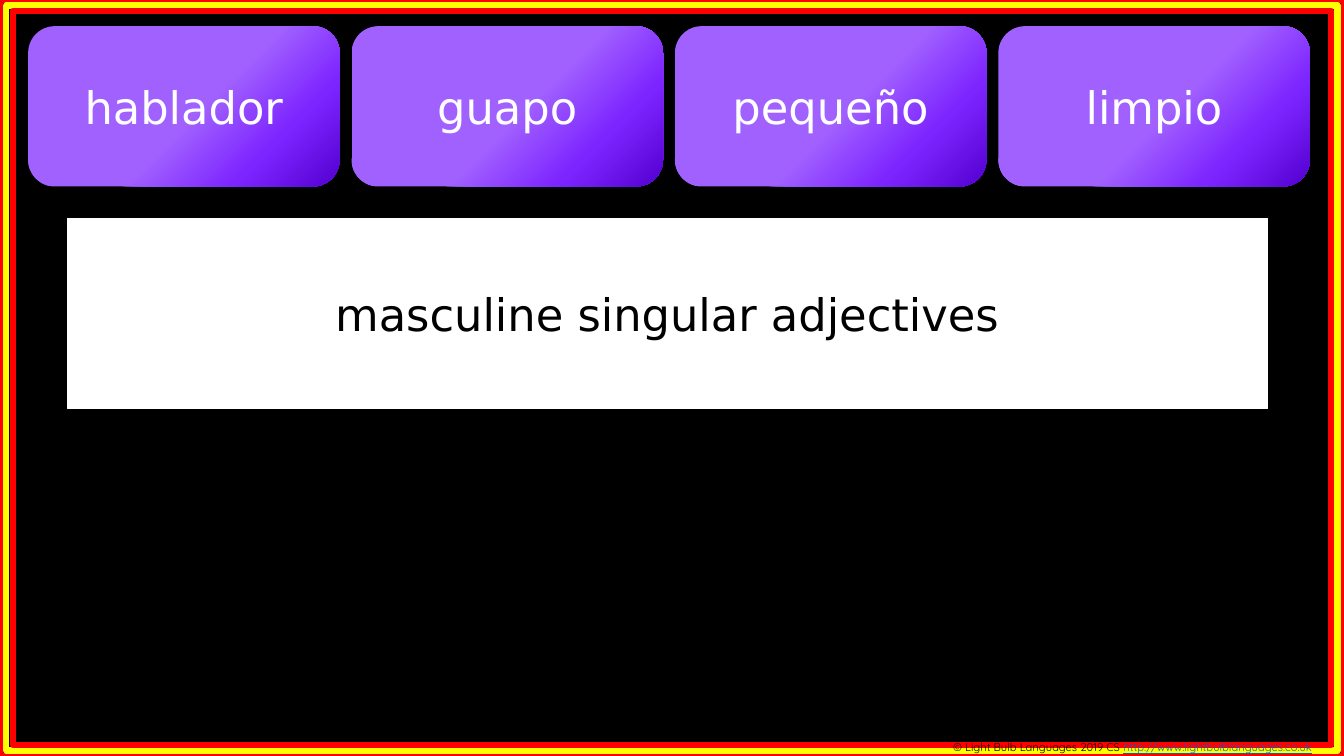
import lxml.etree
import pptx
import pptx.dml.color
import pptx.enum.dml
import pptx.enum.shapes
import pptx.enum.text
import pptx.oxml.ns
import pptx.util

Cm = pptx.util.Cm
Pt = pptx.util.Pt
RGBColor = pptx.dml.color.RGBColor
SHAPE = pptx.enum.shapes.MSO_SHAPE

BLACK = RGBColor(0x00, 0x00, 0x00)
WHITE = RGBColor(0xFF, 0xFF, 0xFF)
RED = RGBColor(0xFF, 0x00, 0x00)
YELLOW = RGBColor(0xFF, 0xFF, 0x00)
LINK_BLUE = RGBColor(0x05, 0x63, 0xC1)
LILAC = RGBColor(0xA1, 0x61, 0xFF)
VIOLET = RGBColor(0x7D, 0x25, 0xFF)
INDIGO = RGBColor(0x54, 0x00, 0xD0)

CARD_STOPS = [(0, LILAC), (28, LILAC), (54, LILAC), (77, VIOLET), (100, INDIGO)]
WORDS = ["hablador", "guapo", "pequeño", "limpio"]
SLIDE_WIDTH, SLIDE_HEIGHT = 33.87, 19.05


def add_box(slide, preset, left, top, width, height):
    shape = slide.shapes.add_shape(preset, Cm(left), Cm(top), Cm(width), Cm(height))
    shape.shadow.inherit = False
    return shape


def write_centred(shape, text, color):
    frame = shape.text_frame
    frame.word_wrap = True
    frame.vertical_anchor = pptx.enum.text.MSO_ANCHOR.MIDDLE
    paragraph = frame.paragraphs[0]
    paragraph.text = text
    paragraph.alignment = pptx.enum.text.PP_ALIGN.CENTER
    paragraph.font.name = "DejaVu Sans"
    paragraph.font.size = Pt(32)
    paragraph.font.color.rgb = color


def fill_gradient(shape, stops, clockwise_angle):
    qn = pptx.oxml.ns.qn
    shape.fill.gradient()
    shape.fill.gradient_angle = 360 - clockwise_angle
    stop_list = shape._element.spPr.find(qn("a:gradFill")).find(qn("a:gsLst"))
    for stop in list(stop_list):
        stop_list.remove(stop)
    for percent, color in stops:
        stop = lxml.etree.SubElement(stop_list, qn("a:gs"), pos=str(percent * 1000))
        lxml.etree.SubElement(stop, qn("a:srgbClr"), val=str(color))


def add_border(slide, left, top, width, height):
    for index, color in enumerate([RED, YELLOW, RED]):
        inset_x, inset_y = index * 0.16, index * 0.14
        border = add_box(slide, SHAPE.RECTANGLE, left + inset_x, top + inset_y,
                         width - 2 * inset_x, height - 2 * inset_y)
        border.fill.background()
        border.line.color.rgb = color
        border.line.width = Pt(4.5)


def add_word_cards(slide, words, left, top, width, height, gap=0.3):
    card_width = (width - gap * (len(words) - 1)) / len(words)
    for index, word in enumerate(words):
        card = add_box(slide, SHAPE.FLOWCHART_ALTERNATE_PROCESS,
                       left + index * (card_width + gap), top, card_width, height)
        fill_gradient(card, CARD_STOPS, 45)
        card.line.fill.background()
        write_centred(card, word, WHITE)


def add_copyright(slide, left, top, width, height):
    box = slide.shapes.add_textbox(Cm(left), Cm(top), Cm(width), Cm(height))
    box.text_frame.word_wrap = True
    paragraph = box.text_frame.paragraphs[0]
    paragraph.font.name = "Quicksand"
    paragraph.font.size = Pt(8)
    notice = paragraph.add_run()
    notice.text = "© Light Bulb Languages 2019 CS "
    notice.font.color.rgb = BLACK
    address = paragraph.add_run()
    address.text = "http://www.lightbulblanguages.co.uk"
    address.font.color.rgb = LINK_BLUE
    address.font.underline = True
    for run in paragraph.runs:
        run.font.name = "Quicksand"
        run.font.size = Pt(8)


def add_answer(slide, text, left, top, width, height):
    panel = add_box(slide, SHAPE.RECTANGLE, left, top, width, height)
    panel.fill.solid()
    panel.fill.fore_color.rgb = WHITE
    panel.line.color.rgb = WHITE
    panel.line.width = Pt(1)
    write_centred(panel, text, BLACK)


def main():
    presentation = pptx.Presentation()
    presentation.slide_width = Cm(SLIDE_WIDTH)
    presentation.slide_height = Cm(SLIDE_HEIGHT)
    slide = presentation.slides.add_slide(presentation.slide_layouts[6])
    slide.background.fill.solid()
    slide.background.fill.fore_color.rgb = BLACK
    add_border(slide, 0, 0, SLIDE_WIDTH, SLIDE_HEIGHT)
    add_word_cards(slide, WORDS, 0.71, 0.66, 32.3, 4.04)
    add_copyright(slide, 23.77, 18.54, 10.62, 0.6)
    add_answer(slide, "masculine singular adjectives", 1.7, 5.51, 30.25, 4.78)
    presentation.save("out.pptx")


if __name__ == "__main__":
    main()
